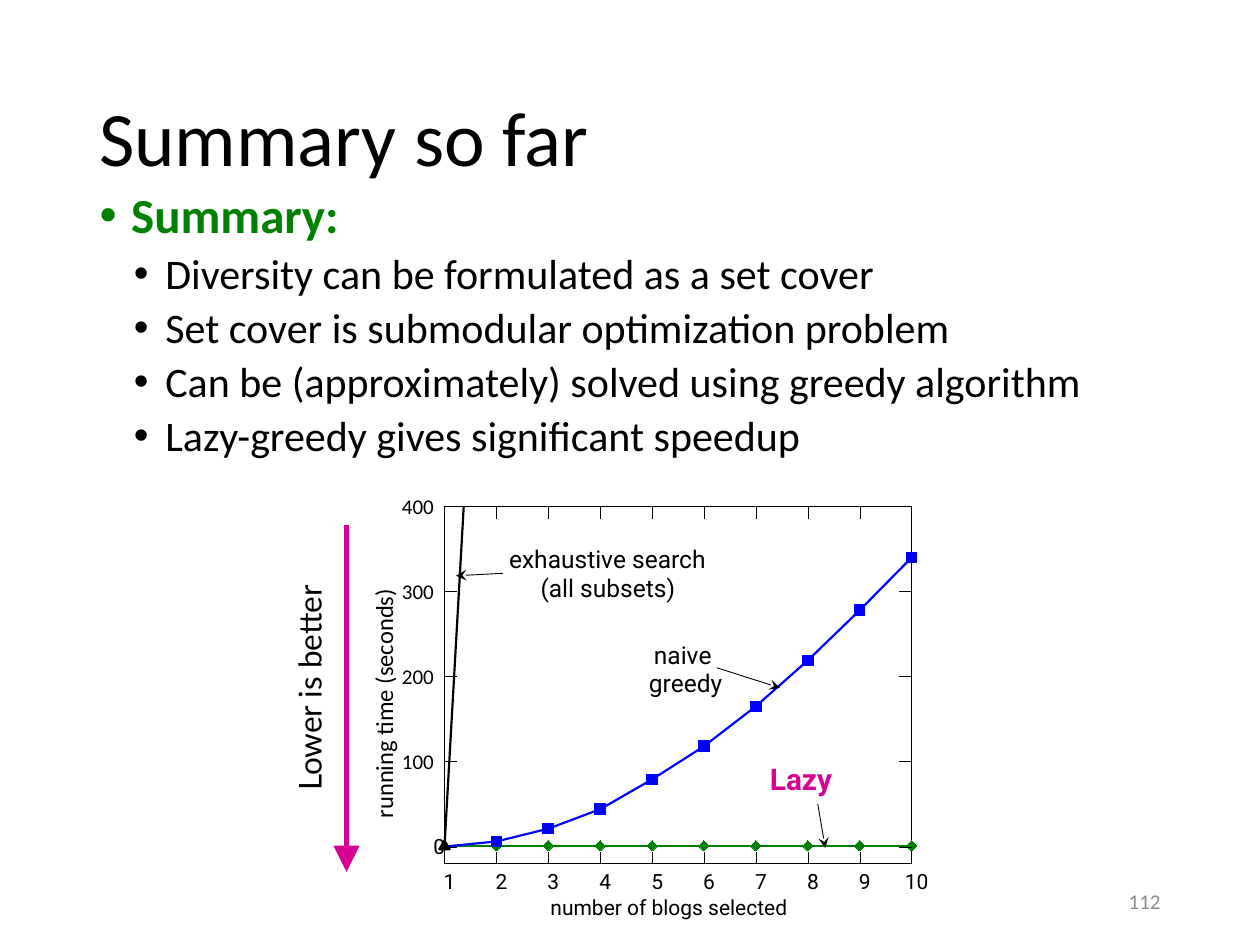
import pptx
import pptx.chart.data
import pptx.dml.color
import pptx.enum.chart
import pptx.enum.shapes
import pptx.enum.text
import pptx.oxml
import pptx.util
from lxml import etree

Pt = pptx.util.Pt
color = pptx.dml.color.RGBColor.from_string
XL = pptx.enum.chart
ALIGN = pptx.enum.text.PP_ALIGN
ANCHOR = pptx.enum.text.MSO_ANCHOR
DRAWING = "http://schemas.openxmlformats.org/drawingml/2006/main"
CHART = "http://schemas.openxmlformats.org/drawingml/2006/chart"

presentation = pptx.Presentation()
presentation.slide_width, presentation.slide_height = Pt(720), Pt(540)
slide = presentation.slides.add_slide(presentation.slide_layouts[5])


def add_text(box, text, size, font="Calibri", hex_color="000000", bold=False,
             align=ALIGN.LEFT, anchor=ANCHOR.TOP, wrap=False, margin=0, shape=None):
    left, top, width, height = [Pt(value) for value in box]
    shape = shape or slide.shapes.add_textbox(left, top, width, height)
    frame = shape.text_frame
    frame_format = {"word_wrap": wrap, "vertical_anchor": anchor,
                    "auto_size": pptx.enum.text.MSO_AUTO_SIZE.NONE}
    for side in ("left", "top", "right", "bottom"):
        frame_format["margin_" + side] = Pt(margin)
    for name, value in {"left": left, "top": top, "width": width, "height": height}.items():
        setattr(shape, name, value)
    for name, value in frame_format.items():
        setattr(frame, name, value)
    frame.text = text
    for paragraph in frame.paragraphs:
        paragraph.alignment = align
        run_font = paragraph.runs[0].font
        for name, value in {"name": font, "size": Pt(size), "bold": bold}.items():
            setattr(run_font, name, value)
        run_font.color.rgb = color(hex_color)
    return shape


def add_line(start, end, width=0.25, hex_color="000000", arrow=None, arrow_size="med"):
    line = slide.shapes.add_connector(
        pptx.enum.shapes.MSO_CONNECTOR.STRAIGHT,
        *[Pt(value) for value in start + end])
    line.line.width = Pt(width)
    line.line.color.rgb = color(hex_color)
    if arrow:
        etree.SubElement(line.line._get_or_add_ln(), f"{{{DRAWING}}}tailEnd",
                         type=arrow, w=arrow_size, len=arrow_size)
    etree.SubElement(line._element.spPr, f"{{{DRAWING}}}effectLst")


title = add_text((49.5, 28.8, 621, 104.4), "Summary so far", 44, anchor=ANCHOR.MIDDLE,
                 wrap=True, margin=7.2, shape=slide.shapes.title)
title.text_frame.paragraphs[0].line_spacing = 0.9

summary_lines = [
    "Summary:",
    "Diversity can be formulated as a set cover",
    "Set cover is submodular optimization problem",
    "Can be (approximately) solved using greedy algorithm",
    "Lazy-greedy gives significant speedup",
]
summary = add_text((36, 102.2, 648, 181.4), "\n".join(summary_lines), 24, wrap=True, margin=7.2)
summary.text_frame.margin_left = Pt(4.5)
for index, paragraph in enumerate(summary.text_frame.paragraphs):
    paragraph.line_spacing = 0.9
    paragraph.space_before = Pt(5 if index else 10)
    paragraph.level = 1 if index else 0
    properties = paragraph._p.get_or_add_pPr()
    properties.set("marL", str(int(Pt(54 if index else 34.5))))
    properties.set("indent", str(int(Pt(-18))))
    etree.SubElement(properties, f"{{{DRAWING}}}buFont", typeface="Arial")
    etree.SubElement(properties, f"{{{DRAWING}}}buChar", char="•")
heading_font = summary.text_frame.paragraphs[0].runs[0].font
heading_font.size, heading_font.bold = Pt(28), True
heading_font.color.rgb = color("008000")

add_text((508.3, 500.4, 162, 28.8), "112", 12, hex_color="8C8C8C", align=ALIGN.RIGHT,
         anchor=ANCHOR.MIDDLE, wrap=True, margin=7.2)
add_text((90.2, 375.1, 172.8, 36), "Lower is better", 18, font="Lato", align=ALIGN.CENTER,
         anchor=ANCHOR.MIDDLE).rotation = 270
add_line((198, 300.2), (198, 498.2), 3, "D60093", "triangle", "lg")

plot_left, plot_top, plot_width, plot_height = 254, 289.5, 267, 204.1
chart_margin = 20
chart_width, chart_height = plot_width + 2 * chart_margin, plot_height + 2 * chart_margin
blogs = range(1, 11)
series_styles = [
    ("naive greedy", [0, 6, 21, 44, 79, 118, 165, 219, 278, 340], "0000FF", "SQUARE"),
    ("Lazy", [1] * len(blogs), "007F00", "DIAMOND"),
]
chart_data = pptx.chart.data.XyChartData()
for name, running_times, hex_color, marker in series_styles:
    series = chart_data.add_series(name)
    for count, seconds in zip(blogs, running_times):
        series.add_data_point(count, seconds)
chart = slide.shapes.add_chart(
    XL.XL_CHART_TYPE.XY_SCATTER_LINES, Pt(plot_left - chart_margin), Pt(plot_top - chart_margin),
    Pt(chart_width), Pt(chart_height), chart_data).chart
chart.has_legend = chart.has_title = False
chart.font.name, chart.font.size = "Roboto", Pt(12)
chart.font.color.rgb = color("000000")
chart.plots[0].vary_by_categories = False

for series, (name, running_times, hex_color, marker) in zip(chart.plots[0].series, series_styles):
    series.smooth = False
    series.format.line.width = Pt(1.25)
    series.marker.style = XL.XL_MARKER_STYLE[marker]
    series.marker.size = 6
    series.marker.format.fill.solid()
    series.marker.format.fill.fore_color.rgb = color(hex_color)
    for line in (series.format.line, series.marker.format.line):
        line.color.rgb = color(hex_color)
    series.points[0].marker.style = XL.XL_MARKER_STYLE.NONE

for axis, low, high, unit in [(chart.category_axis, 1, 10, 1), (chart.value_axis, -20, 400, 100)]:
    axis_format = {"minimum_scale": low, "maximum_scale": high, "major_unit": unit,
                   "has_major_gridlines": False, "has_title": False,
                   "major_tick_mark": XL.XL_TICK_MARK.NONE,
                   "minor_tick_mark": XL.XL_TICK_MARK.NONE,
                   "tick_label_position": XL.XL_TICK_LABEL_POSITION.NONE,
                   "crosses": XL.XL_AXIS_CROSSES.MINIMUM}
    for name, value in axis_format.items():
        setattr(axis, name, value)
    axis.format.line.width = Pt(0.25)
    axis.format.line.color.rgb = color("000000")

plot_area = chart._chartSpace.chart.plotArea
for old_layout in plot_area.findall(f"{{{CHART}}}layout"):
    plot_area.remove(old_layout)
layout = etree.Element(f"{{{CHART}}}layout")
manual = etree.SubElement(layout, f"{{{CHART}}}manualLayout")
for name, value in [("layoutTarget", "inner"), ("xMode", "edge"), ("yMode", "edge"),
                    ("x", chart_margin / chart_width), ("y", chart_margin / chart_height),
                    ("w", plot_width / chart_width), ("h", plot_height / chart_height)]:
    etree.SubElement(manual, f"{{{CHART}}}{name}", val=str(value))
plot_area.insert(0, layout)
plot_area.append(pptx.oxml.parse_xml(
    f'<c:spPr xmlns:c="{CHART}" xmlns:a="{DRAWING}"><a:noFill/><a:ln w="3175"><a:solidFill>'
    '<a:srgbClr val="000000"/></a:solidFill></a:ln></c:spPr>'))

tick = 7
plot_right, plot_bottom = plot_left + plot_width, plot_top + plot_height
for count in blogs:
    x = plot_left + (count - 1) * plot_width / 9
    add_line((x, plot_bottom), (x, plot_bottom - tick))
    add_line((x, plot_top), (x, plot_top + tick))
    label_left, label_width = (x - 4, 13.7) if count == 10 else (x - 0.5, 6.5)
    add_text((label_left, 496.1, label_width, 14.4), str(count), 12, font="Roboto")
for seconds in range(0, 401, 100):
    y = plot_bottom - (seconds + 20) * plot_height / 420
    add_line((plot_left, y), (plot_left + tick, y))
    add_line((plot_right, y), (plot_right - tick, y))
    label_left, label_width, font = (229.7, 23, "Calibri") if seconds else (247.7, 6.5, "Roboto")
    add_text((label_left, y - 7.6, label_width, 14.4), str(seconds), 12, font=font)

add_line((plot_left, 483.9), (265, plot_top), 1.25)
exhaustive_marker = slide.shapes.add_shape(
    pptx.enum.shapes.MSO_SHAPE.ISOSCELES_TRIANGLE,
    Pt(plot_left - 2.9), Pt(480.3), Pt(5.8), Pt(5))
exhaustive_marker.shadow.inherit = False
exhaustive_marker.fill.solid()
exhaustive_marker.fill.fore_color.rgb = color("000000")
exhaustive_marker.line.color.rgb = color("000000")
exhaustive_marker.line.width = Pt(1.25)

add_text((314.6, 511.2, 146.9, 14.4), "number of blogs selected", 12, font="Roboto")
add_text((136.1, 375.8, 166.3, 17.3), "running time (seconds)", 14).rotation = 270

for box, text in [((290.9, 311, 121.7, 17.3), "exhaustive search"),
                  ((308.9, 327.6, 82.1, 17.3), "(all subsets)"),
                  ((373.7, 365.8, 36, 17.3), "naive"),
                  ((370.8, 381.6, 42.5, 17.3), "greedy")]:
    add_text(box, text, 14, font="Roboto")
add_text((440, 434.9, 36, 20.9), "Lazy", 17, font="Roboto", hex_color="D60093", bold=True)
for start, end in [((287.3, 327.6), (260.6, 329)),
                   ((409.7, 381.6), (445.7, 393.1)),
                   ((467.3, 459.4), (471.6, 484.6))]:
    add_line(start, end, width=0.5, arrow="stealth")

presentation.save("out.pptx")
